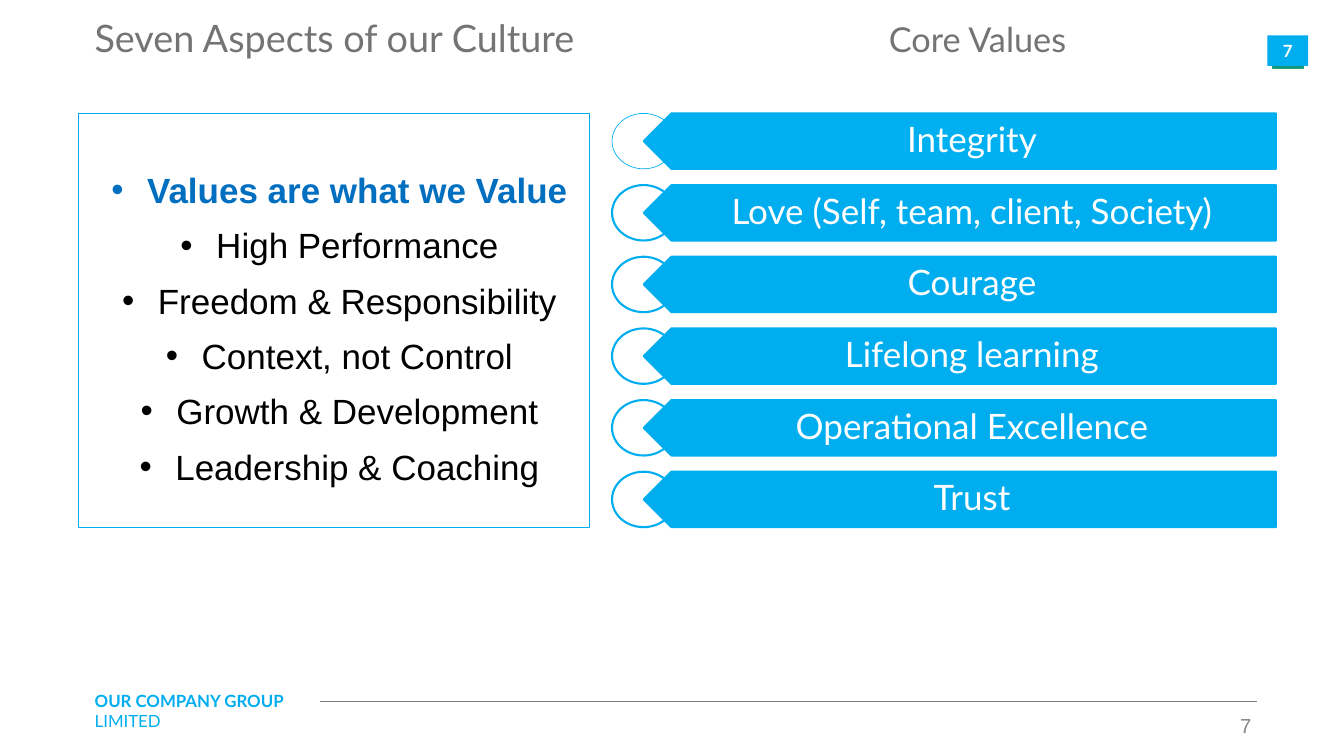
from lxml.etree import SubElement
from pptx import Presentation
from pptx.dml.color import RGBColor
from pptx.enum.shapes import MSO_CONNECTOR as Connector, MSO_SHAPE as Shape
from pptx.enum.text import MSO_ANCHOR as Anchor, PP_ALIGN as Align
from pptx.oxml.ns import qn
from pptx.util import Inches, Pt

COLORS = {
    "cyan": "00ADEF", "sky": "00B0F0", "blue": "006FC0", "heading": "737572",
    "rule": "7F7F7F", "page": "888888", "white": "FFFFFF", "black": "000000",
    "green_light": "4BAC93", "green": "1EA185", "green_dark": "0D997B",
}
ASPECTS = ["Values are what we Value", "High Performance", "Freedom & Responsibility",
           "Context, not Control", "Growth & Development", "Leadership & Coaching"]
CORE_VALUES = ["Integrity", "Love (Self, team, client, Society)", "Courage",
               "Lifelong learning", "Operational Excellence", "Trust"]
TOP, ROW_HEIGHT, ROW_PITCH = 2.25, 1.1, 1.422


def rgb(name):
    return RGBColor.from_string(COLORS[name])


def style(font, size, color, name="Lato", bold=False):
    font.size, font.name, font.bold = Pt(size), name, bold
    font.color.rgb = rgb(color)


def set_frame(frame, insets, anchor):
    frame.word_wrap = True
    frame.vertical_anchor = anchor
    (frame.margin_left, frame.margin_top,
     frame.margin_right, frame.margin_bottom) = map(Inches, insets)


def add_box(slide, kind, area, fill=None, line=None, width=1):
    box = slide.shapes.add_shape(kind, *map(Inches, area))
    box.shadow.inherit = False
    if fill:
        box.fill.solid()
        box.fill.fore_color.rgb = rgb(fill)
    else:
        box.fill.background()
    if line:
        box.line.color.rgb = rgb(line)
        box.line.width = Pt(width)
    else:
        box.line.fill.background()
    return box


def add_label(slide, area, runs, align=Align.LEFT, insets=(0.1, 0.05, 0.1, 0.05),
              anchor=Anchor.TOP, spacing=None):
    """Runs are (text, size, color, font, bold)."""
    frame = slide.shapes.add_textbox(*map(Inches, area)).text_frame
    set_frame(frame, insets, anchor)
    paragraph = frame.paragraphs[0]
    paragraph.alignment = align
    paragraph.line_spacing = spacing
    for text, *look in runs:
        run = paragraph.add_run()
        run.text = text
        style(run.font, *look)


def add_bullet(paragraph, color):
    props = paragraph._p.get_or_add_pPr()
    props.set("marL", str(Inches(0.94)))
    props.set("indent", str(Inches(-0.71)))
    SubElement(SubElement(props, qn("a:buClr")), qn("a:srgbClr"), val=COLORS[color])
    SubElement(props, qn("a:buFont"), typeface="Arial")
    SubElement(props, qn("a:buChar"), char="•")


def add_page_badge(slide):
    underlay = add_box(slide, Shape.RECTANGLE, (25.24, 0.73, 0.62, 0.62), line="green", width=0.75)
    underlay.fill.gradient()
    underlay.fill.gradient_angle = 270
    for stop, color in zip(underlay.fill.gradient_stops, ("green_light", "green_dark")):
        stop.color.rgb = rgb(color)
    badge = add_box(slide, Shape.RECTANGLE, (25.14, 0.7, 0.81, 0.61), fill="cyan")
    frame = badge.text_frame
    set_frame(frame, (0.2, 0.1, 0.2, 0.1), Anchor.MIDDLE)
    frame.text = "7"
    frame.paragraphs[0].alignment = Align.CENTER
    style(frame.paragraphs[0].runs[0].font, 24, "white", bold=True)


def add_footer(slide):
    add_label(slide, (1.78, 13.65, 4.93, 0.5),
              [("OUR COMPANY GROUP ", 24, "cyan", "Lato", True), ("LIMITED", 24, "cyan")])
    rule = slide.shapes.add_connector(
        Connector.STRAIGHT, Inches(6.34), Inches(13.92), Inches(24.94), Inches(13.92))
    rule.line.color.rgb = rgb("rule")
    rule.line.width = Pt(1)
    SubElement(rule._element.spPr, qn("a:effectLst"))
    add_label(slide, (24.53, 14.14, 0.6, 0.39), [("7", 29, "page", "Arial")],
              insets=(0.07, 0, 0, 0), spacing=1.03)


def add_aspects(slide):
    panel = add_box(slide, Shape.RECTANGLE, (1.56, TOP, 10.12, 8.21), line="cyan", width=0.75)
    frame = panel.text_frame
    set_frame(frame, (0, 0.3, 0, 0), Anchor.MIDDLE)
    for index, aspect in enumerate(ASPECTS):
        first = index == 0
        color = "blue" if first else "black"
        paragraph = frame.paragraphs[0] if first else frame.add_paragraph()
        paragraph.text = aspect
        paragraph.alignment = Align.CENTER
        if not first:
            paragraph.space_before = Pt(19)
        add_bullet(paragraph, color)
        style(paragraph.runs[0].font, 50, color, "Arial", first)


def add_core_value(slide, index, value):
    top = TOP + index * ROW_PITCH
    first = index == 0
    arrow = add_box(slide, Shape.PENTAGON, (12.77, top, 12.54, ROW_HEIGHT),
                    "sky" if first else "cyan", "cyan", 3)
    arrow.adjustments[0] = 0.5
    arrow.rotation = 180
    add_label(slide, (13.08, top, 12.23, ROW_HEIGHT), [(value, 50, "white")],
              Align.CENTER, (0.68, 0.27, 0.51, 0.27), Anchor.MIDDLE, 0.9)
    add_box(slide, Shape.OVAL, (12.14, top, 1.25, ROW_HEIGHT),
            line="cyan", width=1 if first else 3)


def main():
    deck = Presentation()
    deck.slide_width, deck.slide_height = Inches(26.66), Inches(15)
    slide = deck.slides.add_slide(deck.slide_layouts[6])

    # Page furniture
    add_page_badge(slide)
    add_footer(slide)

    # Left column: aspects of the culture
    add_label(slide, (1.56, 0.26, 10.12, 1.52),
              [("Seven", 54, "heading"), (" ", 42, "heading", "Arial"),
               ("Aspects of our Culture", 54, "heading")],
              Align.CENTER, (0.03, 0.04, 0, 0))
    add_aspects(slide)

    # Right column: core values
    for index, value in enumerate(CORE_VALUES):
        add_core_value(slide, index, value)
    add_label(slide, (13.47, 0.32, 11.84, 1.45), [("Core Values", 49, "heading")], Align.CENTER)

    deck.save("out.pptx")


if __name__ == "__main__":
    main()
